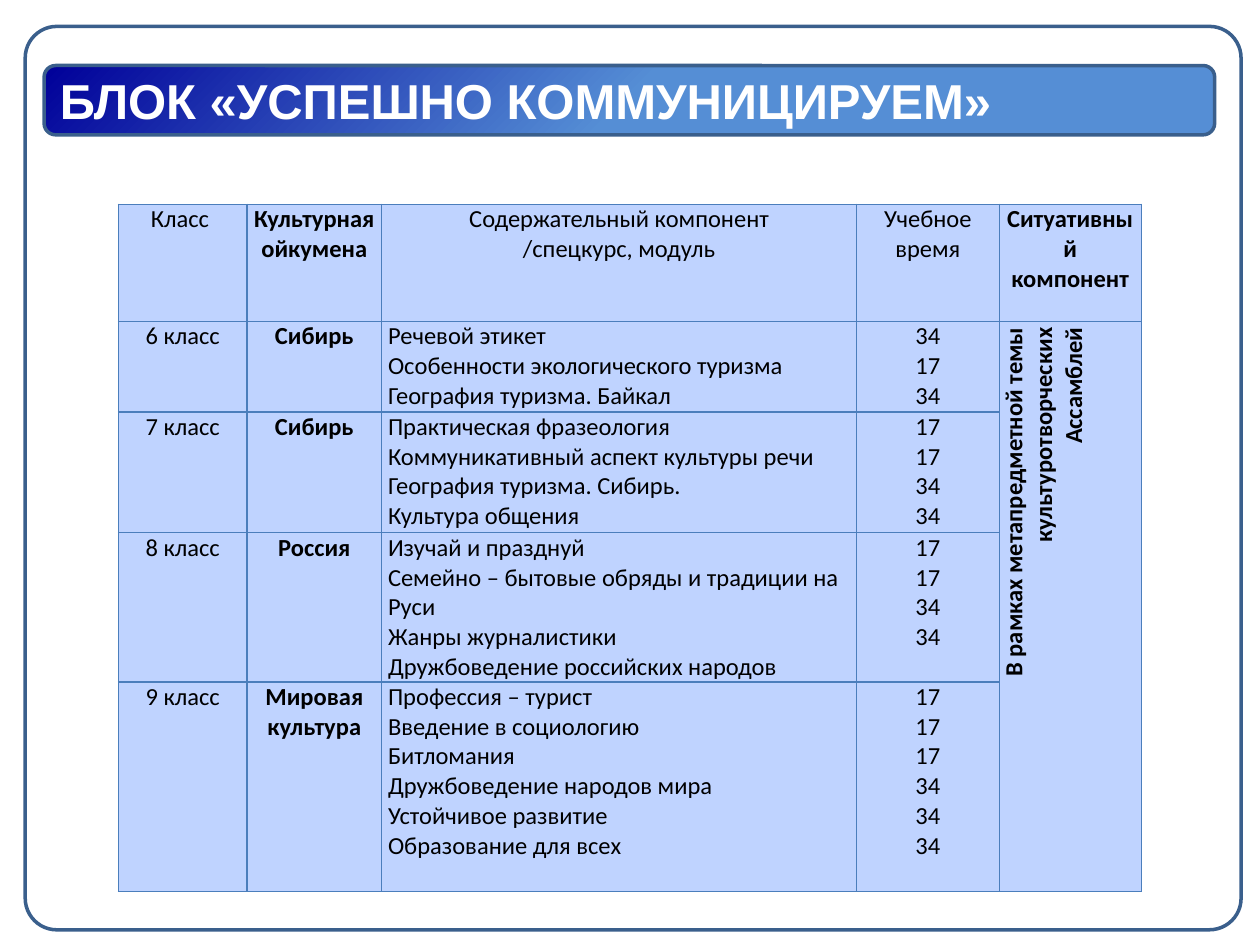
from lxml import etree
from pptx import Presentation
from pptx.dml.color import RGBColor
from pptx.enum.shapes import MSO_SHAPE as Shape
from pptx.enum.text import MSO_ANCHOR as Anchor, PP_ALIGN as Align
from pptx.oxml.ns import qn
from pptx.util import Inches, Pt


def rgb(value):
    return RGBColor.from_string(value)


def add_panel(left, top, width, height):
    panel = slide.shapes.add_shape(Shape.ROUNDED_RECTANGLE, Inches(left), Inches(top),
                                   Inches(width), Inches(height))
    panel.shadow.inherit = False
    panel.line.color.rgb = rgb("3A5F8C")
    panel.line.width = Pt(2)
    return panel


prs = Presentation()
prs.slide_width, prs.slide_height = Inches(10), Inches(7.5)
slide = prs.slides.add_slide(prs.slide_layouts[6])

# Slide frame, translucent white
frame = add_panel(0.2, 0.21, 9.65, 7.17)
frame.adjustments[0] = 0.035
frame.fill.solid()
frame.fill.fore_color.rgb = rgb("FFFFFF")
white = frame.fill._xPr.find(qn("a:solidFill"))[0]
etree.SubElement(white, qn("a:alpha"), val="72000")

# Title bar with diagonal gradient
title = add_panel(0.35, 0.52, 9.29, 0.55)
title.fill.gradient()
title.fill.gradient_angle = 315
for stop, (position, color) in zip(title.fill.gradient_stops,
                                   [(0, "000099"), (0.5, "558ED5")]):
    stop.position = position
    stop.color.rgb = rgb(color)
title.text_frame.vertical_anchor = Anchor.MIDDLE
heading = title.text_frame.paragraphs[0]
heading.text = "БЛОК «УСПЕШНО КОММУНИЦИРУЕМ»"
heading.alignment = Align.LEFT
heading.font.name = "Arial"
heading.font.size = Pt(28)
heading.font.bold = True
heading.font.color.rgb = rgb("FFFFFF")

# Curriculum: one paragraph per line of a cell
curriculum = [
    ["Класс ", "Культурная ойкумена", "Содержательный компонент\n/спецкурс, модуль",
     "Учебное время", "Ситуативный компонент"],
    ["6 класс", "Сибирь",
     "Речевой этикет\nОсобенности экологического туризма\nГеография туризма. Байкал",
     "34\n17\n34",
     "В рамках метапредметной темы культуротворческих\nАссамблей"],
    ["7 класс", "Сибирь",
     "Практическая фразеология\nКоммуникативный аспект культуры речи\n"
     "География туризма. Сибирь.\nКультура общения",
     "17\n17\n34\n34", ""],
    ["8 класс", "Россия",
     "Изучай и празднуй\nСемейно – бытовые обряды и традиции на Руси\n"
     "Жанры журналистики\nДружбоведение российских народов",
     "17\n17\n34\n34", ""],
    ["9 класс", "Мировая культура",
     "Профессия – турист\nВведение в социологию\nБитломания\n"
     "Дружбоведение народов мира\nУстойчивое развитие\nОбразование для всех",
     "17\n17\n17\n34\n34\n34", ""],
]
column_widths = [1.02, 1.07, 3.77, 1.13, 1.13]
row_heights = [0.93, 0.72, 0.96, 1.18, 1.66]
CULTURE, CONTENT, SITUATION = 1, 2, 4

table = slide.shapes.add_table(len(row_heights), len(column_widths), Inches(0.94), Inches(1.62),
                               Inches(sum(column_widths)), Inches(sum(row_heights))).table
for column, width in zip(table.columns, column_widths):
    column.width = Inches(width)
for row, height in zip(table.rows, row_heights):
    row.height = Inches(height)

for r, lesson in enumerate(curriculum):
    for c, text in enumerate(lesson):
        cell = table.cell(r, c)
        cell.margin_left = cell.margin_right = Inches(0.05)
        cell.margin_top = cell.margin_bottom = 0
        cell.text = text
        for line in cell.text_frame.paragraphs:
            line.alignment = Align.CENTER
            if r and c == CONTENT:
                line.alignment = Align.LEFT
            elif r and c == SITUATION:
                line.alignment = Align.RIGHT
            line.font.name = "Calibri"
            line.font.size = Pt(14)
            line.font.bold = c in (CULTURE, SITUATION)
            line.font.color.rgb = rgb("000000")

        # Borders go before the fill in the cell properties
        properties = cell._tc.get_or_add_tcPr()
        for side in ("lnL", "lnR", "lnT", "lnB"):
            border = etree.SubElement(properties, qn(f"a:{side}"), w=str(Pt(0.75)))
            paint = etree.SubElement(border, qn("a:solidFill"))
            etree.SubElement(paint, qn("a:srgbClr"), val="4B7EBC")
        cell.fill.solid()
        cell.fill.fore_color.rgb = rgb("BFD3FF")

# Situational component spans all classes and reads upwards
assemblies = table.cell(1, SITUATION)
assemblies.merge(table.cell(4, SITUATION))
assemblies._tc.get_or_add_tcPr().set("vert", "vert270")

prs.save("out.pptx")
